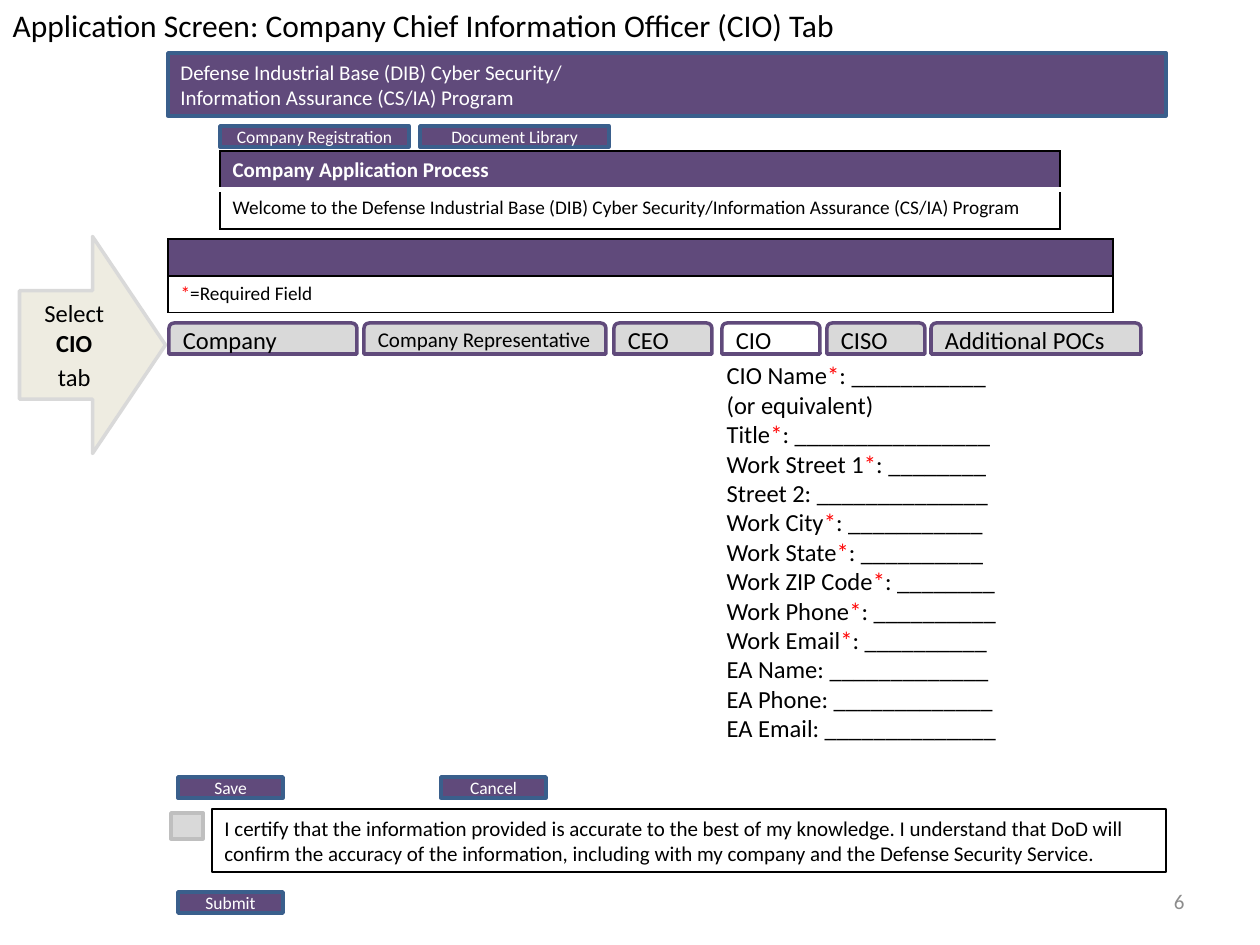
from dataclasses import dataclass
from typing import Optional

import lxml.etree
import pptx
import pptx.dml.color
import pptx.enum.shapes
import pptx.enum.text
import pptx.oxml.ns
import pptx.util

RGBColor = pptx.dml.color.RGBColor
Shapes = pptx.enum.shapes.MSO_SHAPE
Align = pptx.enum.text.PP_ALIGN
Anchor = pptx.enum.text.MSO_ANCHOR
qn = pptx.oxml.ns.qn

PURPLE = RGBColor(0x60, 0x4A, 0x7B)
BLUE = RGBColor(0x3A, 0x5F, 0x8C)
LIGHT_GRAY = RGBColor(0xD9, 0xD9, 0xD9)
MID_GRAY = RGBColor(0xBF, 0xBF, 0xBF)
PAGE_GRAY = RGBColor(0x8C, 0x8C, 0x8C)
CREAM = RGBColor(0xEE, 0xEC, 0xE1)
RED = RGBColor(0xFF, 0, 0)
BLACK = RGBColor(0, 0, 0)
WHITE = RGBColor(0xFF, 0xFF, 0xFF)

PX_PER_INCH = 126
FONT = "Calibri"


@dataclass
class Run:
    text: str
    size: int
    color: RGBColor = BLACK
    bold: bool = False


@dataclass
class Box:
    left: int
    top: int
    width: int
    height: int


@dataclass
class Tab:
    label: str
    left: int
    width: int
    size: int = 14
    fill: Optional[RGBColor] = LIGHT_GRAY


@dataclass
class Field:
    label: str
    blanks: int
    required: bool = True


@dataclass
class Border:
    color: RGBColor
    width: float


BANNER = Box(168, 53, 998, 63)
BUTTONS = {
    "Company Registration": Box(220, 126, 189, 21),
    "Document Library": Box(420, 126, 189, 21),
    "Save": Box(178, 777, 105, 21),
    "Cancel": Box(441, 777, 105, 21),
    "Submit": Box(178, 892, 105, 21),
}
TABS = [
    Tab("Company", 169, 188),
    Tab("Company Representative", 364, 242, size=12),
    Tab("CEO", 614, 98),
    Tab("CIO", 722, 98, fill=None),
    Tab("CISO", 827, 98),
    Tab("Additional POCs", 931, 210),
]
FIELDS = [
    Field("CIO Name", 11),
    Field("(or equivalent)", 0, False),
    Field("Title", 16),
    Field("Work Street 1", 8),
    Field("Street 2", 14, False),
    Field("Work City", 11),
    Field("Work State", 10),
    Field("Work ZIP Code", 8),
    Field("Work Phone", 10),
    Field("Work Email", 10),
    Field("EA Name", 13, False),
    Field("EA Phone", 13, False),
    Field("EA Email", 14, False),
]


def px(value: int) -> int:
    return round(value * 914400 / PX_PER_INCH)


def place(shape, box: Box) -> None:
    shape.left, shape.top = px(box.left), px(box.top)
    shape.width, shape.height = px(box.width), px(box.height)


def write(frame, paragraphs: list[list[Run]], align=Align.LEFT) -> None:
    for index, runs in enumerate(paragraphs):
        paragraph = frame.paragraphs[0] if index == 0 else frame.add_paragraph()
        paragraph.alignment = align
        for item in runs:
            run = paragraph.add_run()
            run.text = item.text
            run.font.name = FONT
            run.font.size = pptx.util.Pt(item.size)
            run.font.bold = item.bold
            run.font.color.rgb = item.color


def add_box(slide, box: Box, fill: Optional[RGBColor], line: RGBColor, paragraphs=(),
            align=Align.LEFT, kind=Shapes.RECTANGLE, line_width: float = 2):
    shape = slide.shapes.add_shape(kind, *map(px, (box.left, box.top, box.width, box.height)))
    shape.shadow.inherit = False
    if fill is None:
        shape.fill.background()
    else:
        shape.fill.solid()
        shape.fill.fore_color.rgb = fill
    shape.line.color.rgb = line
    shape.line.width = pptx.util.Pt(line_width)
    shape.text_frame.word_wrap = True
    shape.text_frame.vertical_anchor = Anchor.MIDDLE
    write(shape.text_frame, paragraphs, align)
    return shape


def set_borders(cell, **borders: Border) -> None:
    properties = cell._tc.get_or_add_tcPr()
    for side in "LRTB":
        border = borders.get(side, Border(BLACK, 1))
        line = lxml.etree.SubElement(properties, qn(f"a:ln{side}"),
                                     w=str(pptx.util.Pt(border.width)))
        solid = lxml.etree.SubElement(line, qn("a:solidFill"))
        lxml.etree.SubElement(solid, qn("a:srgbClr"), val=str(border.color))


def add_panel(slide, box: Box, row_heights: list[int], heading: list[Run],
              body: list[Run], divider: Border, body_anchor):
    frame = slide.shapes.add_table(2, 1, *map(px, (box.left, box.top, box.width, box.height)))
    table = frame.table
    table.first_row = table.horz_banding = False
    for row, height in zip(table.rows, row_heights):
        row.height = px(height)
    header, content = table.cell(0, 0), table.cell(1, 0)
    set_borders(header, B=divider)
    set_borders(content, T=divider)
    for cell, runs, fill in ((header, heading, PURPLE), (content, body, WHITE)):
        cell.fill.solid()
        cell.fill.fore_color.rgb = fill
        write(cell.text_frame, [runs])
        if not runs:  # keep the empty row low
            lxml.etree.SubElement(cell.text_frame.paragraphs[0]._p, qn("a:endParaRPr"), sz="1100")
    content.vertical_anchor = body_anchor


def field_runs(field: Field) -> list[Run]:
    blank = ": " + "_" * field.blanks if field.blanks else ""
    if field.required:
        return [Run(field.label, 14), Run("*", 14, RED), Run(blank, 14)]
    return [Run(field.label + blank, 14)]


def fill_placeholder(shape, box: Box, paragraphs: list[list[Run]]) -> None:
    place(shape, box)
    frame = shape.text_frame
    frame.word_wrap = False
    frame.auto_size = pptx.enum.text.MSO_AUTO_SIZE.NONE
    frame.vertical_anchor = Anchor.TOP
    write(frame, paragraphs)
    for paragraph in frame.paragraphs:
        paragraph.space_before = pptx.util.Pt(0)
        properties = paragraph._p.get_or_add_pPr()
        properties.set("marL", "0")
        properties.set("indent", "0")
        lxml.etree.SubElement(properties, qn("a:buNone"))


def main() -> None:
    presentation = pptx.Presentation()
    presentation.slide_width = pptx.util.Inches(10)
    presentation.slide_height = pptx.util.Inches(7.5)
    slide = presentation.slides.add_slide(presentation.slide_layouts[1])

    # Title and form fields
    fill_placeholder(slide.shapes.title, Box(0, 0, 888, 50),
                     [[Run("Application Screen: Company Chief Information Officer (CIO) Tab", 18)]])
    fill_placeholder(slide.placeholders[1], Box(714, 354, 297, 437),
                     [field_runs(field) for field in FIELDS])

    # Banner and buttons
    add_box(slide, BANNER, PURPLE, BLUE,
            [[Run("Defense Industrial Base (DIB) Cyber Security/", 12, WHITE)],
             [Run("Information Assurance (CS/IA) Program", 12, WHITE)]])
    for label, box in BUTTONS.items():
        add_box(slide, box, PURPLE, BLUE, [[Run(label, 10, WHITE)]], Align.CENTER)

    # Heading panels
    add_panel(slide, Box(220, 151, 840, 78), [38, 40],
              [Run("Company Application Process", 12, WHITE, True)],
              [Run("Welcome to the Defense Industrial Base (DIB) Cyber Security/"
                   "Information Assurance (CS/IA) Program", 11)],
              Border(WHITE, 3), Anchor.TOP)
    add_panel(slide, Box(168, 239, 945, 73), [37, 36], [],
              [Run("*", 11, RED), Run("=Required Field", 11)],
              Border(BLACK, 1), Anchor.BOTTOM)

    # Tabs
    for tab in TABS:
        add_box(slide, Box(tab.left, 323, tab.width, 31), tab.fill, PURPLE,
                [[Run(tab.label, tab.size)]], kind=Shapes.ROUND_2_SAME_RECTANGLE)

    # Arrow pointing at the tabs, with upright text
    arrow = add_box(slide, Box(-16, 272, 217, 146), CREAM, LIGHT_GRAY,
                    [[Run("Select ", 14), Run("CIO", 14, bold=True)], [Run("tab", 14)]],
                    Align.CENTER, Shapes.UP_ARROW)
    arrow.rotation = 90
    arrow.text_frame._txBody.bodyPr.set("vert", "vert270")
    arrow.text_frame.paragraphs[1].space_before = pptx.util.Pt(3)

    # Certification
    add_box(slide, Box(171, 813, 32, 26), LIGHT_GRAY, MID_GRAY)
    add_box(slide, Box(212, 809, 954, 63), None, BLACK,
            [[Run("I certify that the information provided is accurate to the best of my knowledge. "
                  "I understand that DoD will confirm the accuracy of the information, including "
                  "with my company and the Defense Security Service.", 12)]], line_width=0.75)

    # Page number
    page = slide.shapes.add_textbox(*map(px, (903, 876, 294, 50))).text_frame
    page.word_wrap = True
    page.vertical_anchor = Anchor.MIDDLE
    write(page, [[Run("6", 12, PAGE_GRAY)]], Align.RIGHT)

    presentation.save("out.pptx")


if __name__ == "__main__":
    main()
